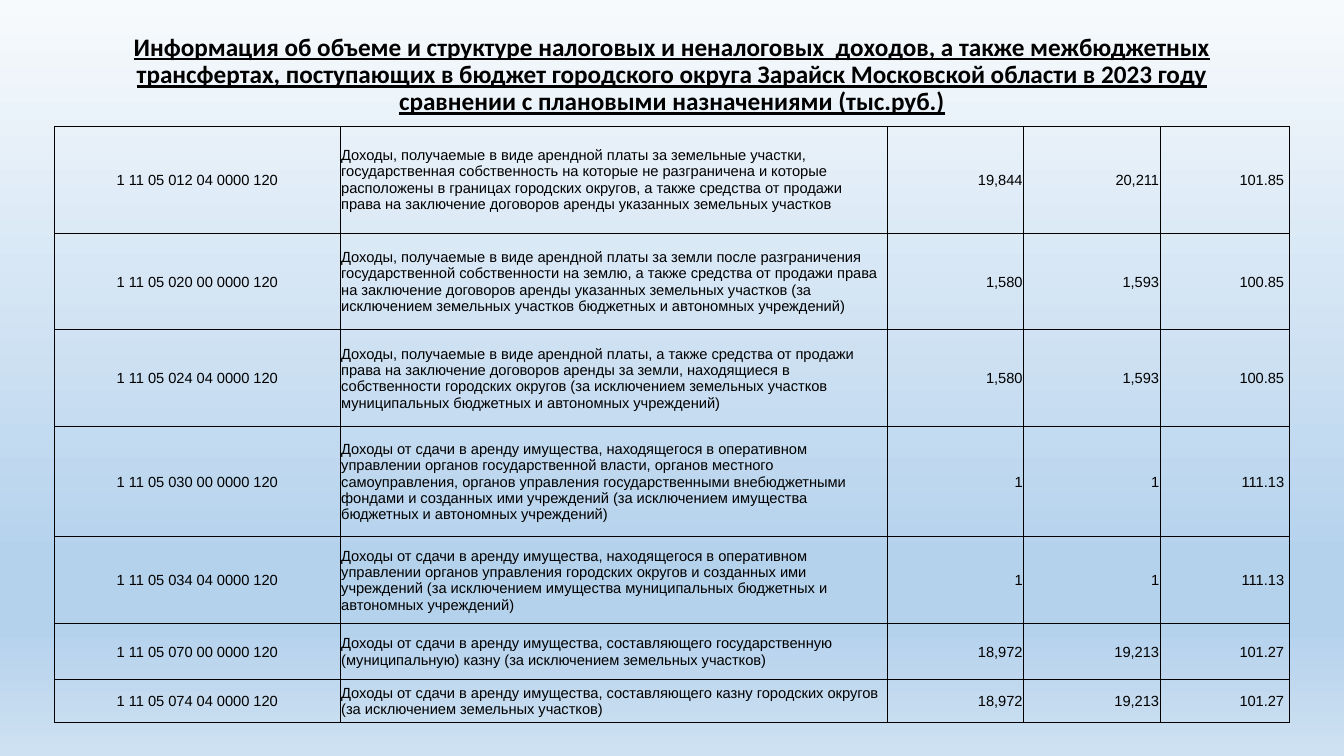
from lxml.etree import SubElement
from pptx import Presentation
from pptx.dml.color import RGBColor
from pptx.enum.text import MSO_ANCHOR, MSO_AUTO_SIZE, PP_ALIGN
from pptx.oxml.ns import qn
from pptx.util import Pt

PX = 9525  # EMU per px, 96 px to the inch
HUES = {"ink": "000000", "top": "F7FAFD", "mid": "B5D2EC", "base": "CEE1F2"}
STOPS = [(0, "top"), (74, "mid"), (83, "mid"), (100, "base")]

TITLE = (
    "Информация об объеме и структуре налоговых и неналоговых  доходов, "
    "а также межбюджетных трансфертах, поступающих в бюджет городского округа "
    "Зарайск Московской области в 2023 году сравнении с плановыми назначениями (тыс.руб.)"
)
COLS = [272, 521, 130, 130, 123]
ALIGNS = [PP_ALIGN.CENTER, PP_ALIGN.LEFT] + [PP_ALIGN.RIGHT] * 3
# Row height, budget code, income, plan, fact, percent
ROWS = [
    (102, "1 11 05 012 04 0000 120",
     "Доходы, получаемые в виде арендной платы за земельные участки, государственная "
     "собственность на которые не разграничена и которые расположены в границах городских "
     "округов, а также средства от продажи права на заключение договоров аренды указанных "
     "земельных участков", "19,844", "20,211", "101.85 "),
    (92, "1 11 05 020 00 0000 120",
     "Доходы, получаемые в виде арендной платы за земли после разграничения государственной "
     "собственности на землю, а также средства от продажи права на заключение договоров "
     "аренды указанных земельных участков (за исключением земельных участков бюджетных и "
     "автономных учреждений)", "1,580", "1,593", "100.85 "),
    (92, "1 11 05 024 04 0000 120",
     "Доходы, получаемые в виде арендной платы, а также средства от продажи права на "
     "заключение договоров аренды за земли, находящиеся в собственности городских округов "
     "(за исключением земельных участков муниципальных бюджетных и автономных учреждений)",
     "1,580", "1,593", "100.85 "),
    (105, "1 11 05 030 00 0000 120",
     "Доходы от сдачи в аренду имущества, находящегося в оперативном управлении органов "
     "государственной власти, органов местного самоуправления, органов управления "
     "государственными внебюджетными фондами и созданных ими учреждений (за исключением "
     "имущества бюджетных и автономных учреждений)", "1", "1", "111.13 "),
    (83, "1 11 05 034 04 0000 120",
     "Доходы от сдачи в аренду имущества, находящегося в оперативном управлении органов "
     "управления городских округов и созданных ими учреждений (за исключением имущества "
     "муниципальных бюджетных и автономных учреждений)", "1", "1", "111.13 "),
    (53, "1 11 05 070 00 0000 120",
     "Доходы от сдачи в аренду имущества, составляющего государственную (муниципальную) "
     "казну (за исключением земельных участков)", "18,972", "19,213", "101.27 "),
    (41, "1 11 05 074 04 0000 120",
     "Доходы от сдачи в аренду имущества, составляющего казну городских округов "
     "(за исключением земельных участков)", "18,972", "19,213", "101.27 "),
]


def paint_back(slide):
    fill = slide.background.fill
    fill.gradient()
    fill.gradient_angle = 270
    stops = slide.element.find(".//" + qn("a:gsLst"))
    for old in list(stops):
        stops.remove(old)
    for pos, hue in STOPS:
        stop = SubElement(stops, qn("a:gs"), pos=str(pos * 1000))
        SubElement(stop, qn("a:srgbClr"), val=HUES[hue])


def add_text(para, text, face, size, align):
    para.alignment = align
    run = para.add_run()
    run.text = text
    run.font.name = face
    run.font.size = Pt(size)
    run.font.color.rgb = RGBColor.from_string(HUES["ink"])
    return run


def add_title(slide, x, y, w, h):
    title = slide.shapes.title
    title.left, title.top, title.width, title.height = (n * PX for n in (x, y, w, h))
    frame = title.text_frame
    frame.word_wrap = True
    frame.auto_size = MSO_AUTO_SIZE.NONE
    frame.vertical_anchor = MSO_ANCHOR.MIDDLE
    para = frame.paragraphs[0]
    para.line_spacing = 0.9
    run = add_text(para, TITLE, "Calibri", 18, PP_ALIGN.CENTER)
    run.font.bold = run.font.underline = True


def rule_cell(cell, left, right):
    """Draw the four borders, with the side widths given in points."""
    props = cell._tc.get_or_add_tcPr()
    sides = [("L", left), ("R", right), ("T", 0.5), ("B", 0.5)]
    for i, (side, width) in enumerate(sides):
        line = SubElement(props, qn("a:ln" + side), w=str(Pt(width)))
        fill = SubElement(line, qn("a:solidFill"))
        SubElement(fill, qn("a:srgbClr"), val=HUES["ink"])
        props.insert(i, line)


def add_grid(slide, x, y):
    size = sum(COLS), sum(row[0] for row in ROWS)
    box = [n * PX for n in (x, y, *size)]
    table = slide.shapes.add_table(len(ROWS), len(COLS), *box).table
    table.first_row = table.horz_banding = False
    for col, width in zip(table.columns, COLS):
        col.width = width * PX
    last = len(COLS) - 1
    for r, (height, *texts) in enumerate(ROWS):
        table.rows[r].height = height * PX
        for c, text in enumerate(texts):
            cell = table.cell(r, c)
            cell.fill.background()
            cell.vertical_anchor = MSO_ANCHOR.MIDDLE
            cell.margin_left = cell.margin_right = cell.margin_top = PX
            cell.margin_bottom = 0
            add_text(cell.text_frame.paragraphs[0], text, "Arial", 10.5, ALIGNS[c])
            rule_cell(cell, 1 if c == 0 else 0.5, 1 if c == last else 0.5)


def main():
    deck = Presentation()
    deck.slide_width, deck.slide_height = 1280 * PX, 720 * PX
    slide = deck.slides.add_slide(deck.slide_layouts[5])
    paint_back(slide)
    add_title(slide, 88, 16, 1104, 112)
    add_grid(slide, 52, 120)
    deck.save("out.pptx")


if __name__ == "__main__":
    main()
